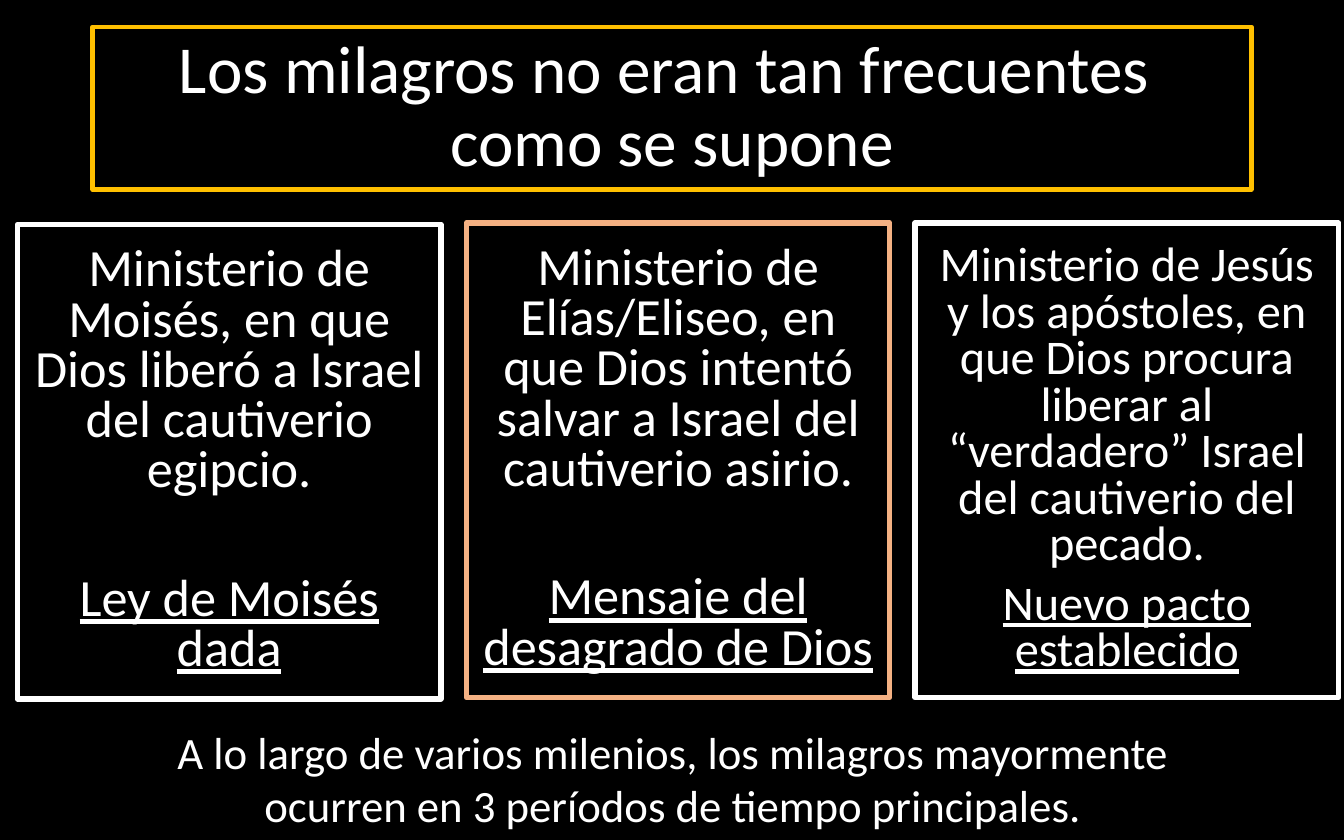
from pptx import Presentation, util as u
from pptx.dml.color import RGBColor
from pptx.enum import shapes, text

WHITE, BLACK, GOLD, PEACH = "FFFFFF", "000000", "FFC000", "F4B183"


def rgb(value):
    return RGBColor.from_string(value)


class Deck:
    font = "Calibri"
    color = WHITE

    def __init__(self, width, height):
        self.prs = Presentation()
        self.prs.slide_width = u.Inches(width)
        self.prs.slide_height = u.Inches(height)

    def add_slide(self, background):
        self.s = self.prs.slides.add_slide(self.prs.slide_layouts[6])
        fill = self.s.background.fill
        fill.solid()
        fill.fore_color.rgb = rgb(background)

    def set_text(self, sp, paragraphs, size, spacing=1.0, gap=0):
        """Fill a shape with centred paragraphs, gap points apart."""
        tf = sp.text_frame
        tf.word_wrap = True
        tf.text = "\n".join(paragraphs)
        for i, p in enumerate(tf.paragraphs):
            p.alignment = text.PP_ALIGN.CENTER
            p.line_spacing = spacing
            if i:
                p.space_before = u.Pt(gap)
            for r in p.runs:
                r.font.name = self.font
                r.font.size = u.Pt(size)
                r.font.color.rgb = rgb(self.color)
        return tf

    def frame(self, box, line, weight, paragraphs, size, spacing, gap=0):
        """Add an outlined, unfilled rectangle with text."""
        sp = self.s.shapes.add_shape(shapes.MSO_SHAPE.RECTANGLE, *map(u.Inches, box))
        sp.shadow.inherit = False
        sp.fill.background()
        sp.line.color.rgb = rgb(line)
        sp.line.width = u.Pt(weight)
        tf = self.set_text(sp, paragraphs, size, spacing, gap)
        tf.vertical_anchor = text.MSO_ANCHOR.MIDDLE
        return tf

    def period(self, box, line, ministry, outcome, size, gap):
        """Add a column whose outcome is underlined."""
        tf = self.frame(box, line, 3, [ministry, outcome], size, 0.8, gap)
        tf.paragraphs[1].runs[0].font.underline = True

    def caption(self, box, content, size):
        self.set_text(self.s.shapes.add_textbox(*map(u.Inches, box)), [content], size)


PERIODS = [
    (1.67, WHITE, "Ministerio de Moisés, en que Dios liberó a Israel del cautiverio egipcio.",
     "Ley de Moisés dada", 28, 42),
    (1.66, PEACH, "Ministerio de Elías/Eliseo, en que Dios intentó salvar a Israel del "
     "cautiverio asirio.", "Mensaje del desagrado de Dios", 28, 42),
    (1.66, WHITE, "Ministerio de Jesús y los apóstoles, en que Dios procura liberar al "
     "“verdadero” Israel del cautiverio del pecado.", "Nuevo pacto establecido", 25.9, 7),
]


def main():
    deck = Deck(10, 6.25)
    deck.add_slide(BLACK)
    deck.frame((0.69, 0.2, 8.62, 1.21), GOLD, 2.5,
               ["Los milagros no eran tan frecuentes \vcomo se supone"], 36, 0.9)
    for i, (top, *column) in enumerate(PERIODS):
        deck.period((0.13 + 3.34 * i, top, 3.15, 3.53), *column)
    deck.caption((1.19, 5.34, 7.63, 0.91),
                 "A lo largo de varios milenios, los milagros mayormente "
                 "ocurren en 3 períodos de tiempo principales.", 24)
    deck.prs.save("out.pptx")


if __name__ == "__main__":
    main()
